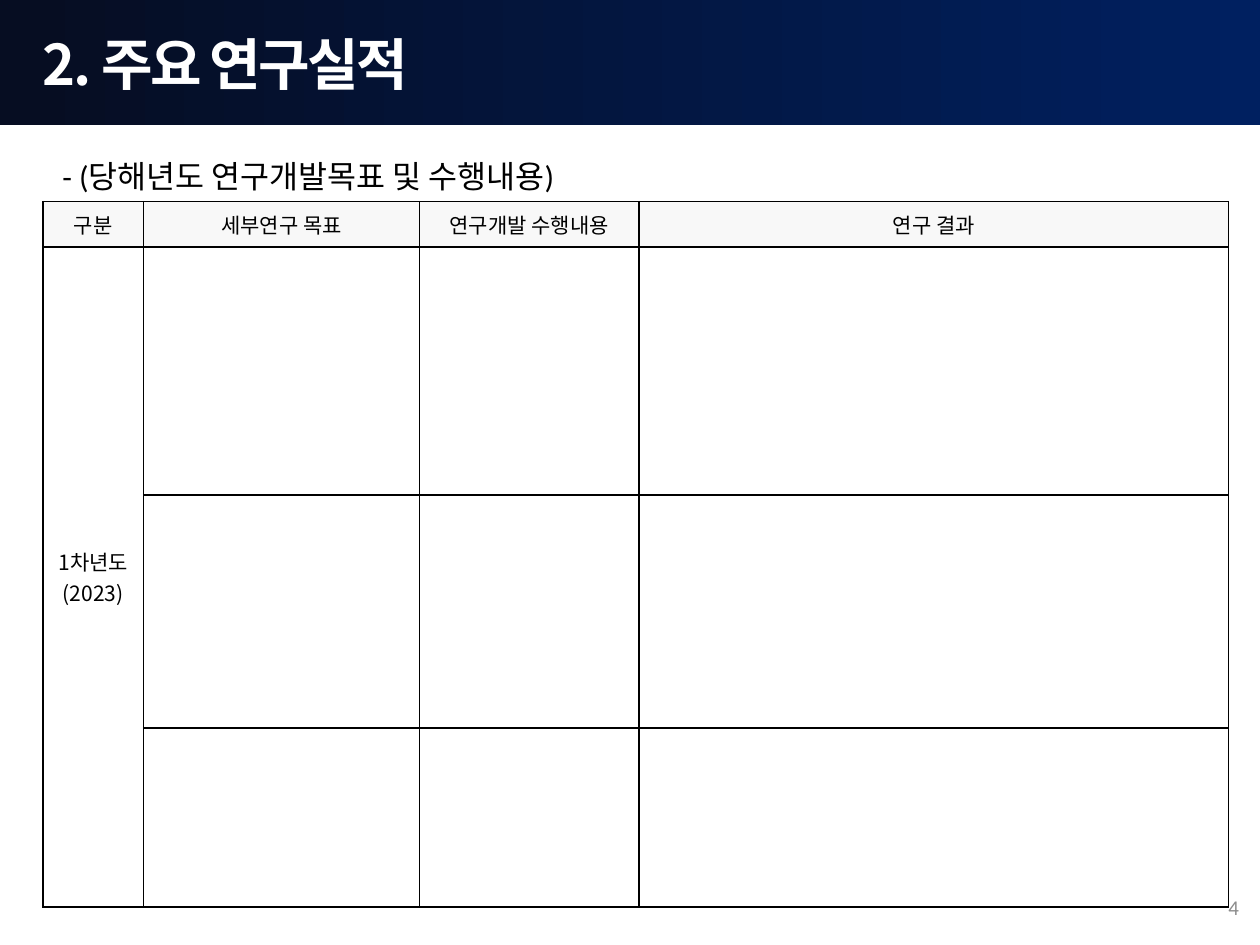
import dataclasses

import pptx
import pptx.dml.color
import pptx.enum.shapes
import pptx.enum.text
import pptx.oxml.ns
import pptx.oxml.xmlchemy
import pptx.util
from lxml import etree

Pt = pptx.util.Pt
RGB = pptx.dml.color.RGBColor.from_string
qn = pptx.oxml.ns.qn
ALIGN = pptx.enum.text.PP_ALIGN
MIDDLE = pptx.enum.text.MSO_ANCHOR.MIDDLE


@dataclasses.dataclass(frozen=True)
class Theme:
    korean: str = "Noto Sans CJK KR"
    latin: str = "Calibri"
    navy: str = "002060"
    night: str = "060D22"
    white: str = "FFFFFF"
    black: str = "000000"
    gray: str = "8C8C8C"
    header: str = "F8F8F8"
    title_size: int = 32
    subtitle_size: int = 18
    small_size: int = 12


THEME = Theme()
LEFT = 24.5
COLUMN_WIDTHS = (57.6, 157.7, 125.3, 337)
ROW_HEIGHTS = (25.9, 141.8, 133.2, 102.2)
HEADINGS = ("구분", "세부연구 목표", "연구개발 수행내용", "연구 결과")


def write(frame, text, size, font, color, align=ALIGN.LEFT, bold=False, spacing=0):
    frame.text = text
    for paragraph in frame.paragraphs:
        paragraph.alignment = align
        paragraph.font.size = Pt(size)
        paragraph.font.bold = bold
        paragraph.font.name = font
        paragraph.font.color.rgb = RGB(color)
        defaults = paragraph._p.pPr.find(qn("a:defRPr"))
        etree.SubElement(defaults, qn("a:ea"), typeface=THEME.korean)
        if spacing:
            for run in paragraph.runs:
                run._r.get_or_add_rPr().set("spc", str(round(spacing * 100)))


def add_title(slide, text):
    title = slide.shapes.title
    title.left, title.top, title.width, title.height = Pt(LEFT), Pt(16.6), Pt(228), Pt(38.9)
    frame = title.text_frame
    frame.margin_left = frame.margin_right = frame.margin_top = frame.margin_bottom = 0
    frame.word_wrap = False
    frame.auto_size = pptx.enum.text.MSO_AUTO_SIZE.NONE
    frame.vertical_anchor = MIDDLE
    write(frame, text, THEME.title_size, THEME.korean, THEME.white, bold=True, spacing=-1.5)


def add_banner(slide):
    banner = slide.shapes.add_shape(
        pptx.enum.shapes.MSO_SHAPE.RECTANGLE, 0, 0, Pt(720), Pt(71.3))
    banner.shadow.inherit = False
    banner.line.fill.background()
    banner.fill.gradient()
    banner.fill.gradient_angle = 0
    stops = ((0.02, THEME.night), (1, THEME.navy))
    for stop, (position, color) in zip(banner.fill.gradient_stops, stops):
        stop.position = position
        stop.color.rgb = RGB(color)
    slide.shapes.title.element.addprevious(banner.element)


def add_label(slide, text, left, top, width, height, size, color,
              align=ALIGN.LEFT, inset=7.2):
    label = slide.shapes.add_textbox(Pt(left), Pt(top), Pt(width), Pt(height))
    frame = label.text_frame
    frame.word_wrap = True
    frame.margin_left = Pt(inset)
    frame.vertical_anchor = MIDDLE
    write(frame, text, size, THEME.latin, color, align)


def border_cell(cell):
    properties = cell._tc.get_or_add_tcPr()
    for side in ("lnL", "lnR", "lnT", "lnB"):
        line = etree.SubElement(properties, qn(f"a:{side}"), w=str(Pt(1)))
        fill = etree.SubElement(line, qn("a:solidFill"))
        etree.SubElement(fill, qn("a:srgbClr"), val=THEME.black)


def fill_cell(cell, text):
    cell.vertical_anchor = MIDDLE
    write(cell.text_frame, text, THEME.small_size, THEME.korean, THEME.black, ALIGN.CENTER)


def add_results_table(slide):
    results = slide.shapes.add_table(
        len(ROW_HEIGHTS), len(COLUMN_WIDTHS), Pt(LEFT), Pt(115.2),
        Pt(sum(COLUMN_WIDTHS)), Pt(sum(ROW_HEIGHTS))).table
    results.first_row = results.horz_banding = False
    for column, width in zip(results.columns, COLUMN_WIDTHS):
        column.width = Pt(width)
    for row, height in zip(results.rows, ROW_HEIGHTS):
        row.height = Pt(height)
        for cell in row.cells:
            border_cell(cell)
            cell.fill.background()
    for cell, heading in zip(results.rows[0].cells, HEADINGS):
        cell.fill.solid()
        cell.fill.fore_color.rgb = RGB(THEME.header)
        fill_cell(cell, heading)
    year = results.cell(1, 0)
    year.merge(results.cell(len(ROW_HEIGHTS) - 1, 0))
    year.margin_left = year.margin_right = Pt(5)
    fill_cell(year, "1차년도\n(2023)")


def main():
    deck = pptx.Presentation()
    deck.slide_width, deck.slide_height = Pt(720), Pt(540)
    slide = deck.slides.add_slide(deck.slide_layouts.get_by_name("Title Only"))
    add_title(slide, "2. 주요 연구실적")
    add_banner(slide)
    add_label(slide, "4", 553, 504, 162, 28.8, THEME.small_size, THEME.gray, ALIGN.RIGHT)
    add_results_table(slide)
    add_label(slide, "- (당해년도 연구개발목표 및 수행내용)", LEFT, 86.4, 350.6, 28.8,
              THEME.subtitle_size, THEME.black, inset=11.2)
    deck.save("out.pptx")


if __name__ == "__main__":
    main()
